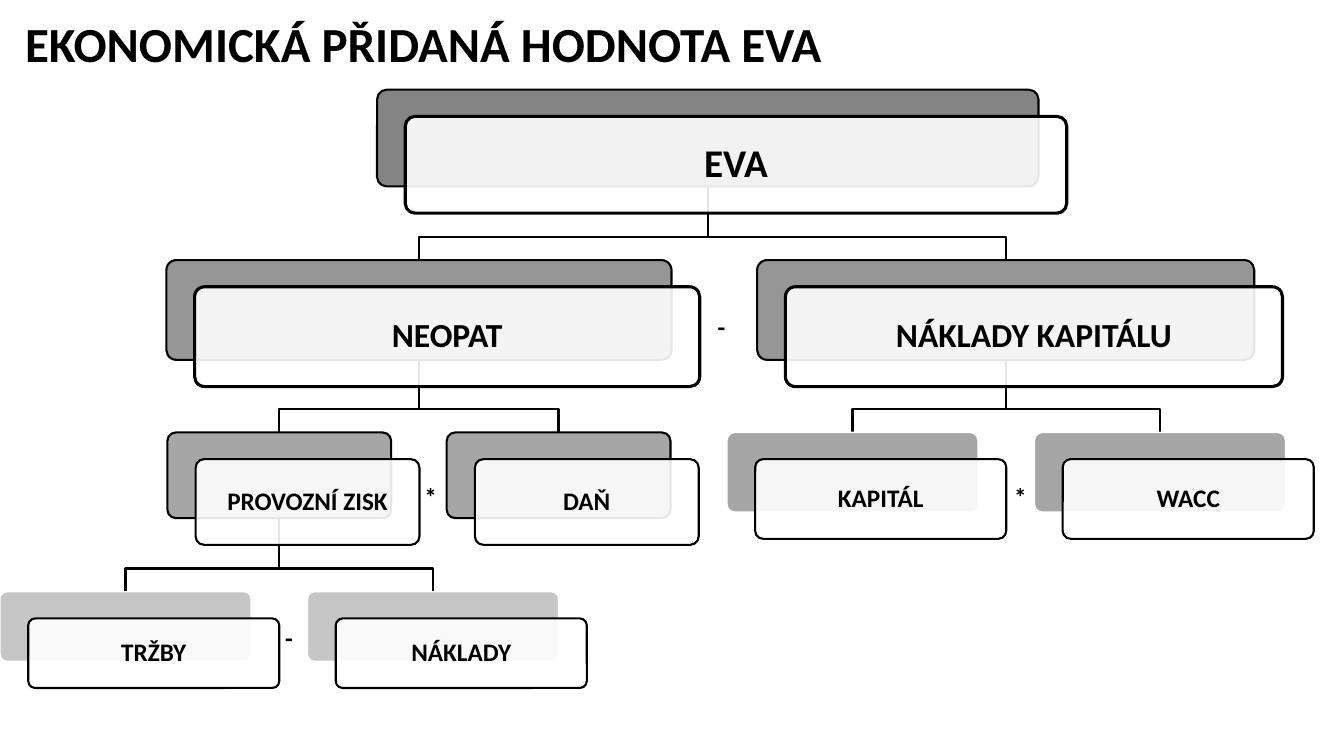
from dataclasses import dataclass
from typing import Optional

from lxml.etree import SubElement
from pptx import Presentation
from pptx.dml.color import RGBColor
from pptx.enum.shapes import MSO_SHAPE
from pptx.enum.text import MSO_ANCHOR, MSO_AUTO_SIZE, PP_ALIGN
from pptx.oxml.ns import qn
from pptx.util import Inches, Pt

COLORS = {
    "black": "000000",
    "white": "FFFFFF",
    "root": "848484",
    "branch": "969696",
    "detail": "A6A6A6",
    "leaf": "C6C6C6",
}
FONT = {"name": "Calibri", "bold": True}
CARD_OFFSET_X, CARD_OFFSET_Y = 0.28, 0.265  # front card relative to its back plate
BEND_GAP = 0.23  # height of a connector's last leg


@dataclass(frozen=True)
class Level:
    top: float
    color: str
    text_size: float
    card_line: float
    inset: float


@dataclass(frozen=True)
class Node:
    label: str
    level: Level
    left: float
    width: float
    height: float
    parent: Optional["Node"] = None
    plate_line: str = "black"

    @property
    def center(self) -> float:
        return self.left + self.width / 2


@dataclass(frozen=True)
class Operator:
    sign: str
    left: float
    top: float


ROOT = Level(0.89, "root", 28, 2.25, 0.12)
BRANCH = Level(2.58, "branch", 24, 2.25, 0.1)
DETAIL = Level(4.29, "detail", 18, 1.5, 0.07)
LEAF = Level(5.87, "leaf", 18, 1.5, 0.07)

eva = Node("EVA", ROOT, 3.74, 6.56, 0.96)
neopat = Node("NEOPAT", BRANCH, 1.65, 5.01, 0.99, eva)
capital_costs = Node("NÁKLADY KAPITÁLU", BRANCH, 7.51, 4.93, 0.99, eva)
operating_profit = Node("PROVOZNÍ ZISK", DETAIL, 1.66, 2.22, 0.85, neopat)
NODES = [
    eva,
    neopat,
    operating_profit,
    Node("TRŽBY", LEAF, 0, 2.49, 0.69, operating_profit, "white"),
    Node("NÁKLADY", LEAF, 3.05, 2.49, 0.69, operating_profit, "white"),
    Node("DAŇ", DETAIL, 4.43, 2.22, 0.85, neopat),
    capital_costs,
    Node("KAPITÁL", DETAIL, 7.21, 2.49, 0.79, capital_costs, "white"),
    Node("WACC", DETAIL, 10.26, 2.49, 0.79, capital_costs, "white"),
]
OPERATORS = [
    Operator("-", 7.02, 3.04),
    Operator("*", 4.11, 4.73),
    Operator("*", 9.96, 4.73),
    Operator("-", 2.73, 6.12),
]


def rgb(name: str) -> RGBColor:
    return RGBColor.from_string(COLORS[name])


def apply_format(target, values: dict) -> None:
    for attribute, value in values.items():
        setattr(target, attribute, value)


def set_line(shape, color: str, width: float) -> None:
    shape.line.color.rgb = rgb(color)
    shape.line.width = Pt(width)


def write_text(shape, text: str, size: float, frame_format: dict, paragraph_format: dict) -> None:
    apply_format(shape.text_frame, {"word_wrap": True, **frame_format})
    paragraph = shape.text_frame.paragraphs[0]
    apply_format(paragraph, paragraph_format)
    run = paragraph.add_run()
    run.text = text
    apply_format(run.font, {**FONT, "size": Pt(size)})
    run.font.color.rgb = rgb("black")


def add_text(slide, text: str, box: tuple, size: float, frame_format: dict, paragraph_format: dict) -> None:
    shape = slide.shapes.add_textbox(*map(Inches, box))
    write_text(shape, text, size, frame_format, paragraph_format)


def add_branch_line(slide, parent: Node, child: Node) -> None:
    start = parent.level.top + parent.height
    bend = child.level.top - BEND_GAP
    points = [(parent.center, bend), (child.center, bend), (child.center, child.level.top)]
    builder = slide.shapes.build_freeform(Inches(parent.center), Inches(start))
    builder.add_line_segments([(Inches(x), Inches(y)) for x, y in points], close=False)
    shape = builder.convert_to_shape()
    shape.shadow.inherit = False
    shape.fill.background()
    set_line(shape, "black", 1.5)


def add_rounded_box(slide, left: float, top: float, node: Node, fill: str):
    box = map(Inches, (left, top, node.width, node.height))
    shape = slide.shapes.add_shape(MSO_SHAPE.ROUNDED_RECTANGLE, *box)
    shape.adjustments[0] = 0.1
    shape.shadow.inherit = False
    shape.fill.solid()
    shape.fill.fore_color.rgb = rgb(fill)
    return shape


def add_node(slide, node: Node) -> None:
    level = node.level
    plate = add_rounded_box(slide, node.left, level.top, node, level.color)
    set_line(plate, node.plate_line, 1.5 if node.plate_line == "black" else 1)

    card = add_rounded_box(slide, node.left + CARD_OFFSET_X, level.top + CARD_OFFSET_Y, node, "white")
    set_line(card, "black", level.card_line)
    fill_color = card._element.spPr.find(qn("a:solidFill")).find(qn("a:srgbClr"))
    SubElement(fill_color, qn("a:alpha")).set("val", "90000")
    sides = ("left", "top", "right", "bottom")
    frame_format = {f"margin_{side}": Inches(level.inset) for side in sides}
    frame_format["vertical_anchor"] = MSO_ANCHOR.MIDDLE
    write_text(card, node.label, level.text_size, frame_format,
               {"alignment": PP_ALIGN.CENTER, "line_spacing": 0.9})


def main() -> None:
    presentation = Presentation()
    presentation.slide_width = Inches(13.33)
    presentation.slide_height = Inches(7.5)
    slide = presentation.slides.add_slide(presentation.slide_layouts[6])

    # Title
    add_text(slide, "EKONOMICKÁ PŘIDANÁ HODNOTA EVA", (0.15, 0.15, 13.03, 6.6), 35,
             {}, {"line_spacing": 0.9})

    # Branch lines, behind the boxes
    for node in NODES:
        if node.parent:
            add_branch_line(slide, node.parent, node)

    # Tree boxes
    for node in NODES:
        add_node(slide, node)

    # Signs between siblings
    for operator in OPERATORS:
        add_text(slide, operator.sign, (operator.left, operator.top, 0.47, 0.4), 18,
                 {"auto_size": MSO_AUTO_SIZE.SHAPE_TO_FIT_TEXT}, {})

    presentation.save("out.pptx")


if __name__ == "__main__":
    main()
